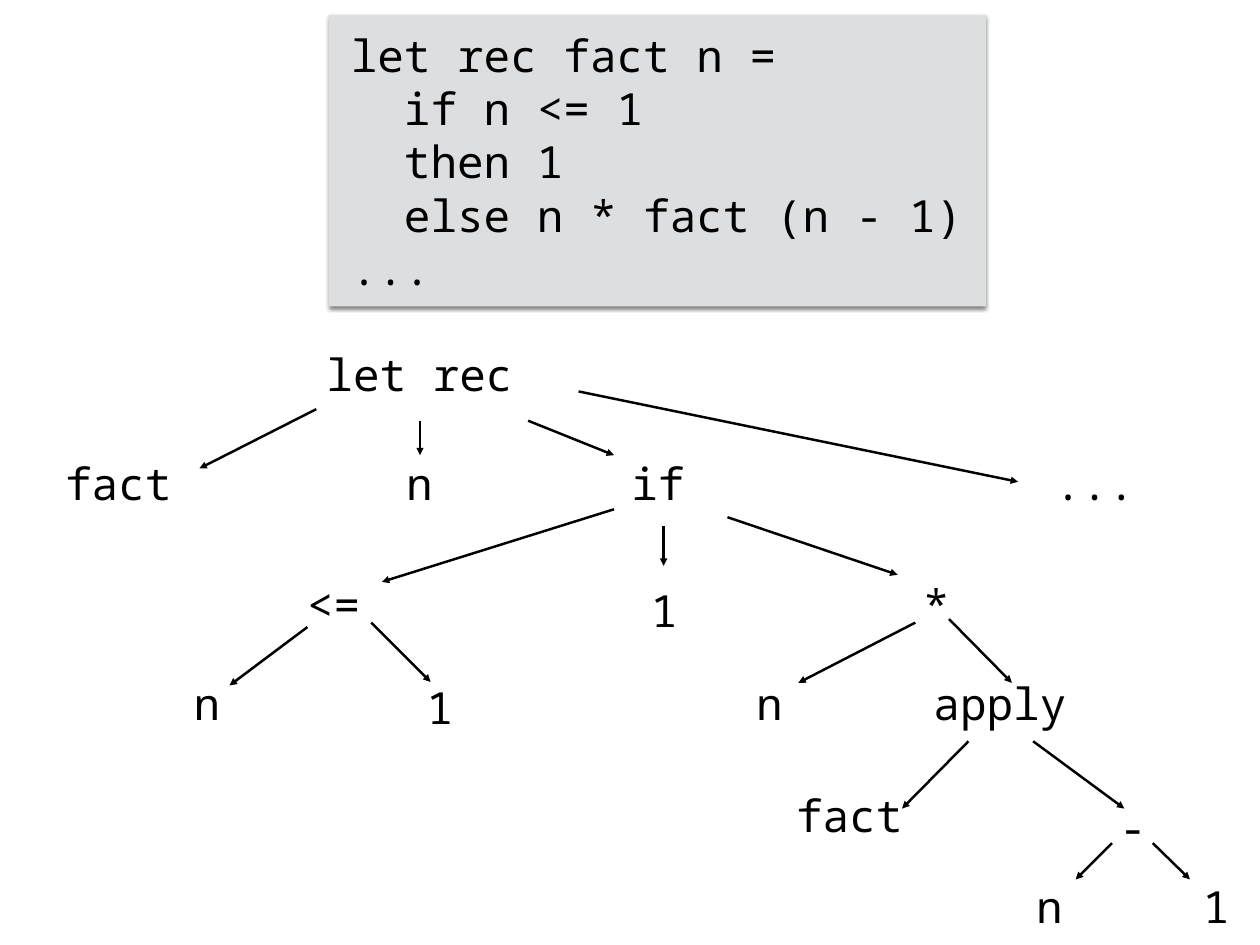
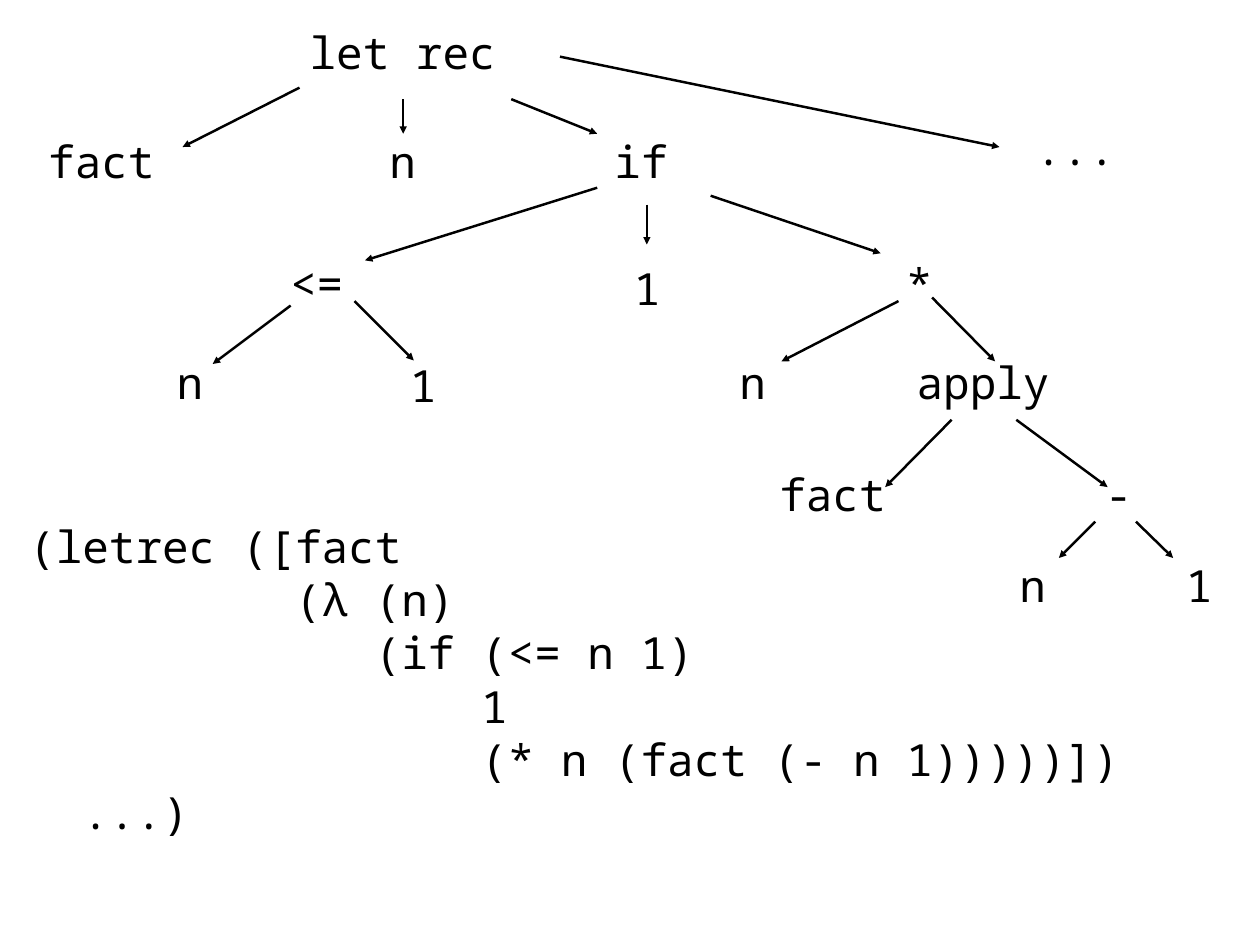
"""Builds two slides that show a factorial function as code and as a syntax tree."""
from lxml import etree
from pptx import Presentation
from pptx.dml.color import RGBColor
from pptx.enum import shapes, text
from pptx.oxml import parse_xml
from pptx.oxml.ns import nsdecls, qn
from pptx.util import Inches, Pt

BLACK = RGBColor(0x00, 0x00, 0x00)
PANEL_GREY = RGBColor(0xDC, 0xDE, 0xE0)
FONT = "Noto Sans Mono"
CHARACTER_WIDTH = 0.3
MARGIN = 0.06
LABEL_HEIGHT = 0.68

OCAML_CODE = """let rec fact n =
  if n <= 1
  then 1
  else n * fact (n - 1)
..."""
RACKET_CODE = """(letrec ([fact
          (λ (n)
             (if (<= n 1)
                 1
                 (* n (fact (- n 1)))))])
  ...)"""

LABELS = [
    ("let rec", 3.62, 3.88),
    ("fact", 0.67, 5.11), ("n", 4.52, 5.11), ("if", 7.06, 5.11),
    ("<=", 3.4, 6.48), ("1", 7.28, 6.54), ("*", 10.35, 6.48),
    ("n", 2.12, 7.6), ("1", 4.75, 7.64), ("n", 8.47, 7.6), ("apply", 10.47, 7.6),
    ("fact", 8.92, 8.86),
    ("n", 11.63, 9.89), ("1", 13.51, 9.89),
]
ARROWS = [
    (3.57, 4.62, 2.25, 5.29), (4.74, 4.75, 4.74, 5.14), (5.96, 4.75, 6.93, 5.14),
    (6.93, 5.75, 4.31, 6.57), (7.49, 5.94, 7.49, 6.39), (8.21, 5.84, 10.13, 6.49),
    (3.47, 7.08, 2.59, 7.74), (4.19, 7.03, 4.86, 7.7),
    (10.33, 7.03, 9.01, 7.71), (10.71, 6.99, 11.42, 7.71),
    (10.93, 8.37, 10.18, 9.13), (11.66, 8.37, 12.69, 9.13),
    (12.55, 9.52, 12.14, 9.93), (13.01, 9.52, 13.43, 9.93),
]


def add_code(slide, content, left, top, width, height, alignment, wrap=False):
    box = slide.shapes.add_textbox(Inches(left), Inches(top), Inches(width), Inches(height))
    frame = box.text_frame
    frame.text = content
    frame.word_wrap = wrap
    frame.auto_size = text.MSO_AUTO_SIZE.SHAPE_TO_FIT_TEXT
    frame.vertical_anchor = text.MSO_ANCHOR.MIDDLE
    frame.margin_left = frame.margin_right = Inches(MARGIN)
    frame.margin_top = frame.margin_bottom = Inches(MARGIN)
    for paragraph in frame.paragraphs:
        paragraph.alignment = alignment
        for run in paragraph.runs:
            run.font.name = FONT
            run.font.size = Pt(36)
            run.font.color.rgb = BLACK


def add_tree(slide, shift_x, shift_y, minus, rest, rest_arrow):
    labels = [(label, x - shift_x, y - shift_y) for label, x, y in LABELS]
    for label, left, top in labels + [("-", *minus), ("...", *rest)]:
        width = CHARACTER_WIDTH * len(label) + 2 * MARGIN + 0.01
        add_code(slide, label, left, top, width, LABEL_HEIGHT, text.PP_ALIGN.CENTER)
    arrows = [(x1 - shift_x, y1 - shift_y, x2 - shift_x, y2 - shift_y)
              for x1, y1, x2, y2 in ARROWS]
    for ends in arrows + [rest_arrow]:
        arrow = slide.shapes.add_connector(
            shapes.MSO_CONNECTOR.STRAIGHT, *[Inches(end) for end in ends])
        arrow.line.color.rgb = BLACK
        arrow.line.width = Pt(2)
        etree.SubElement(arrow.line._get_or_add_ln(), qn("a:tailEnd"), type="triangle")
        etree.SubElement(arrow._element.spPr, qn("a:effectLst"))


presentation = Presentation()
presentation.slide_width = Inches(14.22)
presentation.slide_height = Inches(10.67)
blank_layout = presentation.slide_layouts[6]

slide = presentation.slides.add_slide(blank_layout)
panel = slide.shapes.add_shape(
    shapes.MSO_SHAPE.RECTANGLE, Inches(3.71), Inches(0.17), Inches(7.42), Inches(3.29))
panel.fill.solid()
panel.fill.fore_color.rgb = PANEL_GREY
panel.line.fill.background()
panel._element.spPr.append(parse_xml(
    f'<a:effectLst {nsdecls("a")}>'
    f'<a:outerShdw blurRad="{Pt(3)}" dist="{Pt(2)}" dir="5400000" rotWithShape="0">'
    '<a:srgbClr val="000000"><a:alpha val="50000"/></a:srgbClr>'
    '</a:outerShdw></a:effectLst>'))
add_code(slide, OCAML_CODE, 3.9, 0.34, 7.03, 2.96, text.PP_ALIGN.LEFT)
add_tree(slide, 0, 0, minus=(12.57, 9), rest=(11.84, 5.11),
         rest_arrow=(6.53, 4.42, 11.49, 5.44))

slide = presentation.slides.add_slide(blank_layout)
add_tree(slide, 0.19, 3.63, minus=(12.41, 5.24), rest=(11.62, 1.33),
         rest_arrow=(6.32, 0.64, 11.28, 1.66))
add_code(slide, RACKET_CODE, 0.27, 5.9, 13.44, 3.53, text.PP_ALIGN.LEFT, wrap=True)

presentation.save("out.pptx")
